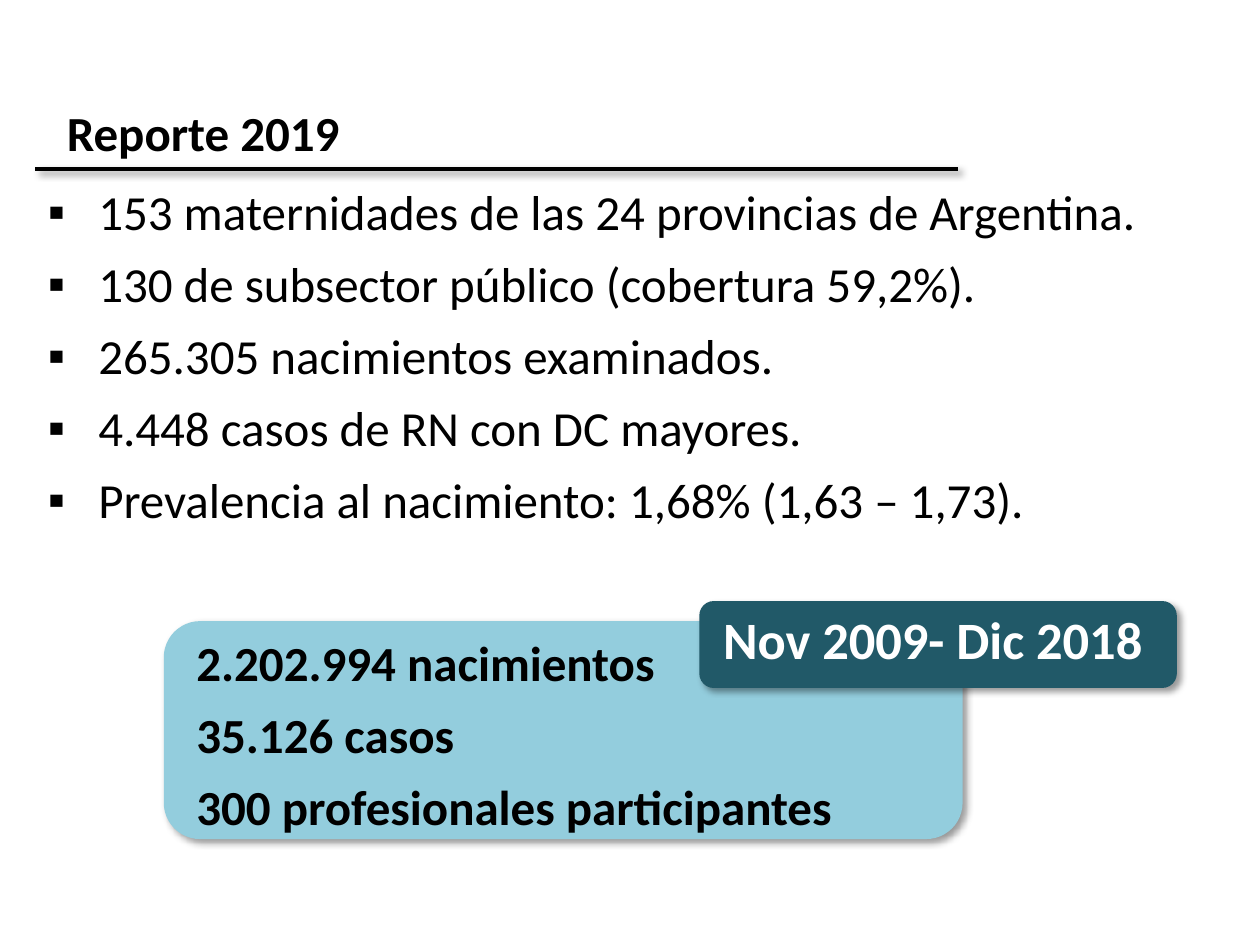
"""Build the 2019 report slide with its key figures and cumulative totals."""
from lxml.etree import SubElement
from pptx import Presentation
from pptx.dml.color import RGBColor
from pptx.enum.shapes import MSO_CONNECTOR, MSO_SHAPE
from pptx.enum.text import MSO_ANCHOR, MSO_AUTO_SIZE, PP_ALIGN
from pptx.oxml.ns import qn
from pptx.util import Inches, Pt

TITLE = ["Reporte 2019"]
FINDINGS = [
    "153 maternidades de las 24 provincias de Argentina.",
    "130 de subsector público (cobertura 59,2%).",
    "265.305 nacimientos examinados.",
    "4.448 casos de RN con DC mayores.",
    "Prevalencia al nacimiento: 1,68% (1,63 – 1,73).",
]
TOTALS = ["2.202.994 nacimientos", "35.126 casos", "300 profesionales participantes"]
PERIOD = ["Nov 2009- Dic 2018"]
BLACK, WHITE, LIGHT_TEAL, DARK_TEAL = "000000", "FFFFFF", "93CDDD", "215968"


def color(value):
    return RGBColor.from_string(value)


def place(shape, area):
    shape.left, shape.top, shape.width, shape.height = map(Inches, area)


def add_shadow(shape):
    effects = SubElement(shape._element.spPr, qn("a:effectLst"))
    shadow = SubElement(effects, qn("a:outerShdw"), blurRad=str(Pt(4)), dist=str(Pt(3)),
                        dir=str(45 * 60000), algn="tl", rotWithShape="0")
    tint = SubElement(shadow, qn("a:srgbClr"), val=BLACK)
    SubElement(tint, qn("a:alpha"), val="40000")


def set_indent(para, indent, bullet):
    properties = para._p.get_or_add_pPr()
    properties.set("marL", str(Inches(indent)))
    properties.set("indent", str(-Inches(indent)))
    if bullet:
        SubElement(properties, qn("a:buChar"), char=bullet)
    else:
        SubElement(properties, qn("a:buNone"))


def write(box, area, lines, size=28, bold=True, ink=BLACK, indent=0, bullet=None):
    place(box, area)
    frame = box.text_frame
    frame.word_wrap = True
    frame.auto_size = MSO_AUTO_SIZE.NONE
    frame.vertical_anchor = MSO_ANCHOR.TOP
    for index, line in enumerate(lines):
        para = frame.add_paragraph() if index else frame.paragraphs[0]
        para.alignment = PP_ALIGN.LEFT
        para.space_before = Pt(0)
        if indent:
            para.line_spacing = 0.93
            para.space_before = Pt(9.9)
        set_indent(para, indent, bullet)
        span = para.add_run()
        span.text = line
        span.font.name = "Calibri"
        span.font.size = Pt(size)
        span.font.bold = bold
        span.font.color.rgb = color(ink)


def add_panel(page, area, fill):
    panel = page.shapes.add_shape(MSO_SHAPE.ROUNDED_RECTANGLE, *map(Inches, area))
    panel.fill.solid()
    panel.fill.fore_color.rgb = color(fill)
    panel.line.fill.background()
    add_shadow(panel)


def add_text_box(page, area, lines, **style):
    write(page.shapes.add_textbox(*map(Inches, area)), area, lines, **style)


def add_rule(page, left, right, top):
    rule = page.shapes.add_connector(MSO_CONNECTOR.STRAIGHT, *map(Inches, (left, top, right, top)))
    rule.line.color.rgb = color(BLACK)
    rule.line.width = Pt(2.25)
    add_shadow(rule)


def main():
    deck = Presentation()
    deck.slide_width, deck.slide_height = Inches(10), Inches(7.5)
    page = deck.slides.add_slide(deck.slide_layouts[1])
    write(page.shapes.title, (0.43, 0.76, 7.64, 0.57), TITLE)
    write(page.placeholders[1], (0.28, 1.43, 9.33, 2.85), FINDINGS,
          bold=False, indent=0.4, bullet="▪")
    add_rule(page, 0.28, 7.6, 1.34)
    add_panel(page, (1.3, 4.93, 6.34, 1.73), LIGHT_TEAL)
    add_text_box(page, (1.46, 5.01, 5.98, 1.7), TOTALS, indent=0.19)
    add_panel(page, (5.55, 4.77, 3.79, 0.69), DARK_TEAL)
    add_text_box(page, (5.64, 4.77, 3.7, 0.76), PERIOD, size=30, ink=WHITE)
    deck.save("out.pptx")


if __name__ == "__main__":
    main()
